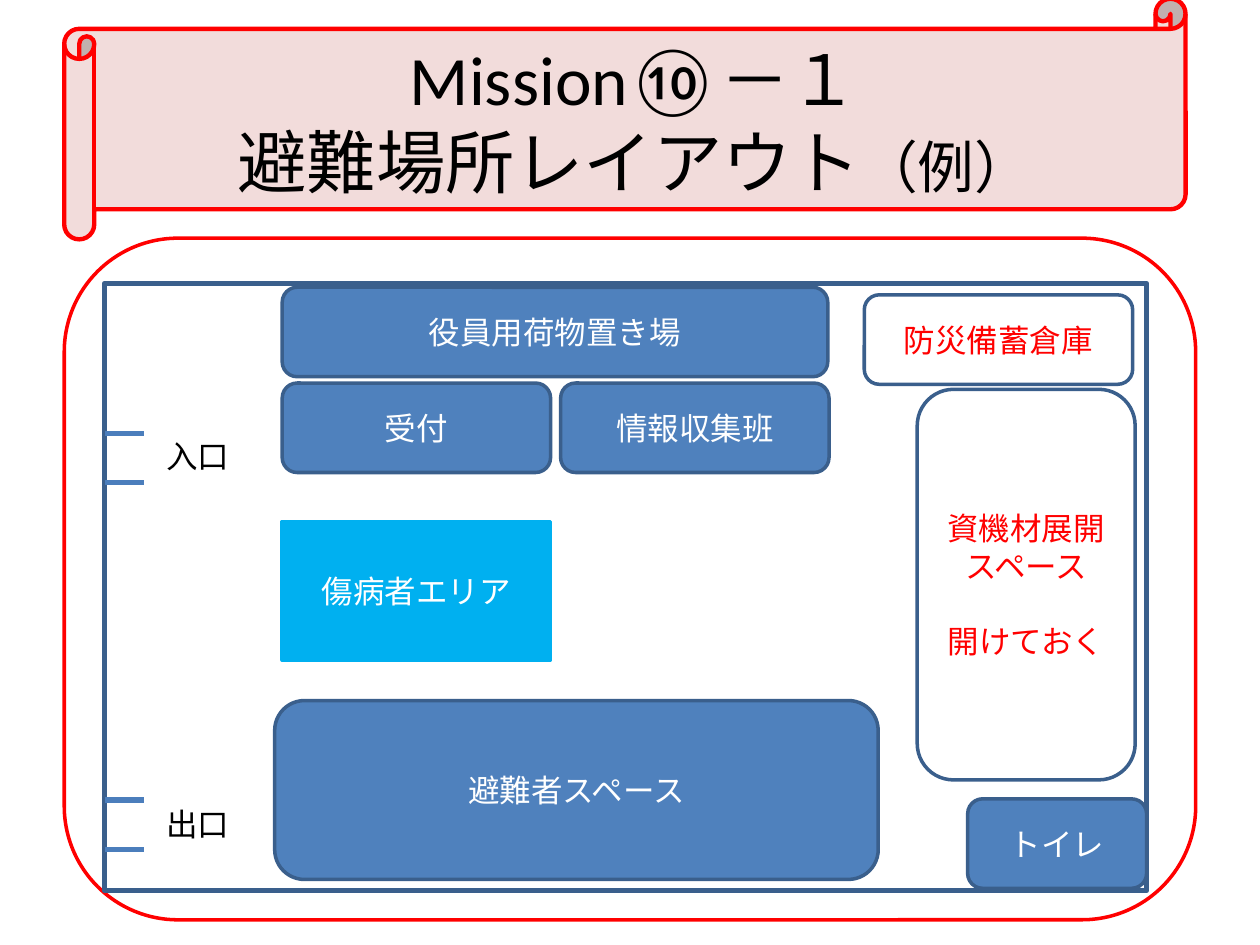
from pptx import Presentation, util as u
from pptx.dml.color import RGBColor
from pptx.enum import shapes, text
from pptx.oxml.ns import qn
from lxml import etree

RED, WHITE, BLACK = "FF0000", "FFFFFF", "000000"
BLUE, NAVY, LINE_BLUE, SKY, PINK = "4F81BD", "3A5F8C", "4B7EBC", "00B0F0", "F2DCDB"
ROUND = shapes.MSO_SHAPE.ROUNDED_RECTANGLE
RECT = shapes.MSO_SHAPE.RECTANGLE


def rgb(value):
    return RGBColor.from_string(value)


def inches(values):
    return [u.Inches(v) for v in values]


class LayoutSlide:
    font = "Calibri"
    size = 18
    centred = {"vertical_anchor": text.MSO_ANCHOR.MIDDLE, "word_wrap": True,
               "auto_size": text.MSO_AUTO_SIZE.NONE}

    def __init__(self, prs):
        self.s = prs.slides.add_slide(prs.slide_layouts[5])

    def run(self, p, words, color, size=None):
        r = p.add_run()
        r.text = words
        for name, value in {"name": self.font, "size": u.Pt(size or self.size)}.items():
            setattr(r.font, name, value)
        r.font.color.rgb = rgb(color)

    def frame(self, tf, **fmt):
        for name, value in fmt.items():
            setattr(tf, name, value)

    def title(self, box, lines, suffix):
        """Fill the title, in front of the shapes drawn so far."""
        sp = self.s.shapes.title
        self.s.shapes._spTree.append(sp._element)
        sp.left, sp.top, sp.width, sp.height = inches(box)
        self.frame(sp.text_frame, **self.centred)
        p = sp.text_frame.paragraphs[0]
        p.alignment = text.PP_ALIGN.CENTER
        self.run(p, lines[0], BLACK, 39.6)
        p.add_line_break()
        self.run(p, lines[1], BLACK, 39.6)
        self.run(p, suffix, BLACK, 32.4)

    def shape(self, kind, box, fill, line, width=2):
        sp = self.s.shapes.add_shape(kind, *inches(box))
        sp.shadow.inherit = False
        if fill:
            sp.fill.solid()
            sp.fill.fore_color.rgb = rgb(fill)
        else:
            sp.fill.background()
        sp.line.color.rgb = rgb(line)
        sp.line.width = u.Pt(width)
        return sp

    def area(self, box, lines, fill=BLUE, line=NAVY, color=WHITE, kind=ROUND):
        """Draw a labelled area and return its paragraphs."""
        tf = self.shape(kind, box, fill, line).text_frame
        self.frame(tf, **self.centred)
        for i, words in enumerate(lines):
            p = tf.add_paragraph() if i else tf.paragraphs[0]
            p.alignment = text.PP_ALIGN.CENTER
            self.run(p, words, color)
        return tf.paragraphs

    def label(self, box, words):
        tf = self.s.shapes.add_textbox(*inches(box)).text_frame
        self.frame(tf, word_wrap=True, auto_size=text.MSO_AUTO_SIZE.SHAPE_TO_FIT_TEXT)
        self.run(tf.paragraphs[0], words, BLACK)

    def line(self, x1, y1, x2, y2):
        c = self.s.shapes.add_connector(shapes.MSO_CONNECTOR.STRAIGHT,
                                        *inches((x1, y1, x2, y2)))
        c.line.color.rgb = rgb(LINE_BLUE)
        c.line.width = u.Pt(3)
        etree.SubElement(c._element.spPr, qn("a:effectLst"))

    def doorway(self, y, words, label_top):
        for edge in (y, y + 0.39):
            self.line(0.83, edge, 1.14, edge)
        self.label((1.22, label_top, 1.02, 0.4), words)


def main():
    prs = Presentation()
    prs.slide_width, prs.slide_height = inches((10, 7.5))
    page = LayoutSlide(prs)

    page.shape(shapes.MSO_SHAPE.HORIZONTAL_SCROLL, (0.51, -0.01, 8.9, 1.91), PINK, RED, 2.5)
    page.title((0.98, 0.32, 8.11, 1.25), ("Mission⑩－１", "避難場所レイアウト"), "（例）")
    page.shape(ROUND, (0.51, 1.89, 8.98, 5.41), None, RED)
    page.shape(RECT, (0.83, 2.25, 8.27, 4.82), None, NAVY, 3)

    page.doorway(3.44, "入口", 3.42)
    page.doorway(6.35, "出口", 6.34)

    for box, words in (
        ((2.24, 3.04, 2.13, 0.71), "受付"),
        ((4.45, 3.04, 2.13, 0.71), "情報収集班"),
        ((2.24, 2.28, 4.33, 0.71), "役員用荷物置き場"),
        ((7.68, 6.34, 1.42, 0.71), "トイレ"),
        ((2.18, 5.56, 4.79, 1.42), "避難者スペース"),
    ):
        page.area(box, [words])
    page.area((2.24, 4.14, 2.13, 1.1), ["傷病者エリア"], SKY, SKY, kind=RECT)

    page.area((6.86, 2.34, 2.13, 0.71), ["防災備蓄倉庫"], None, color=RED)
    equipment = page.area((7.28, 3.09, 1.73, 3.1),
                          ["資機材展開", "スペース", "開けておく"], None, color=RED)
    equipment[-1].space_before = u.Pt(21.6)

    prs.save("out.pptx")


if __name__ == "__main__":
    main()
